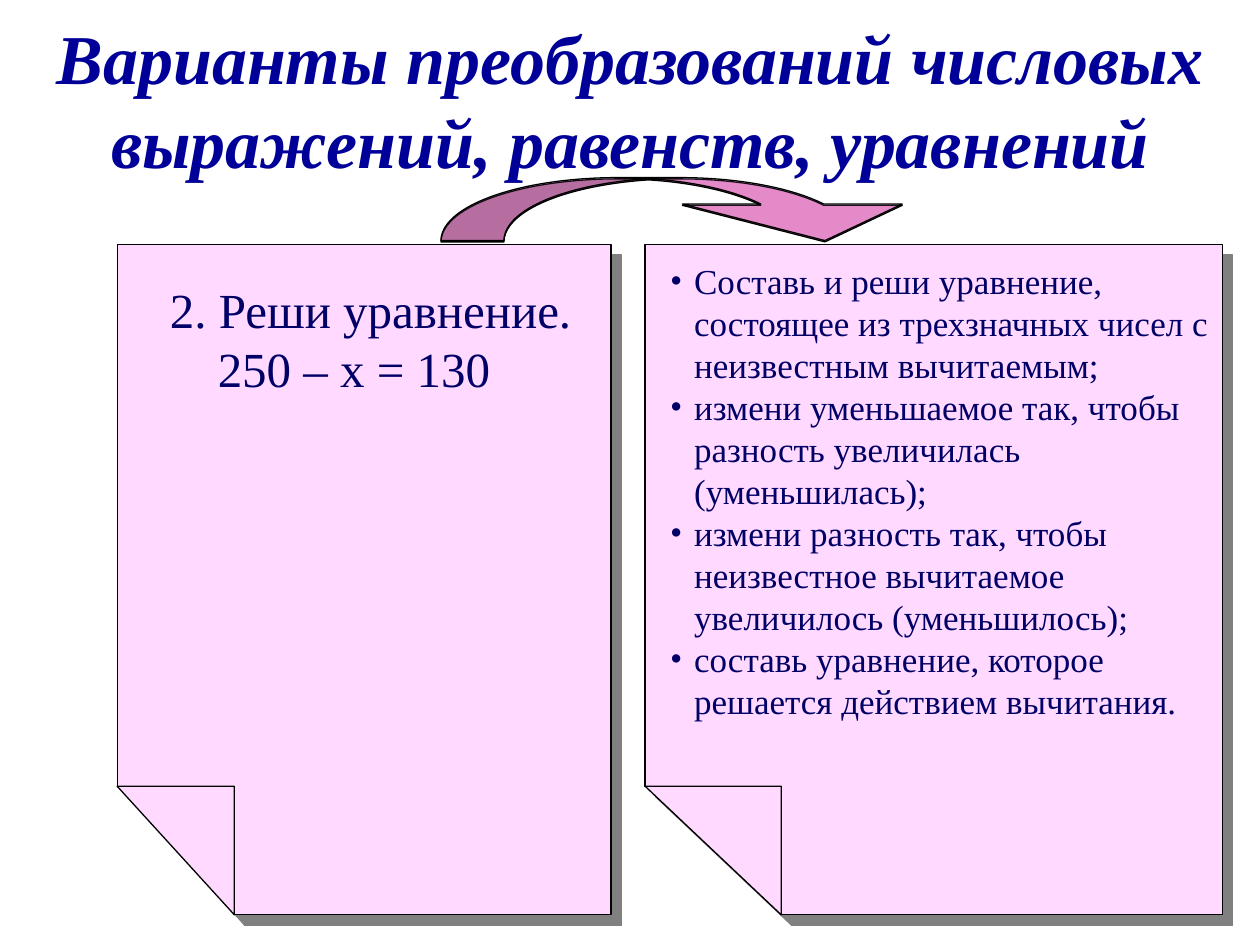
from dataclasses import dataclass
from typing import Optional

from lxml import etree
from pptx import Presentation
from pptx.dml.color import RGBColor
from pptx.enum.shapes import MSO_SHAPE
from pptx.enum.text import MSO_ANCHOR, MSO_AUTO_SIZE, PP_ALIGN
from pptx.oxml.ns import qn
from pptx.util import Inches, Pt

TITLE_ONLY = 5
CURVED_ARROW = MSO_SHAPE.CURVED_DOWN_ARROW
BOTTOM = MSO_ANCHOR.BOTTOM
NO_AUTOFIT = MSO_AUTO_SIZE.NONE
GROW = MSO_AUTO_SIZE.SHAPE_TO_FIT_TEXT
CENTER = PP_ALIGN.CENTER
LEFT = PP_ALIGN.LEFT


@dataclass(frozen=True)
class Theme:
    font: str = "Times New Roman"
    title: str = "000099"
    text: str = "000066"
    paper: str = "FFD9FF"
    arrow: str = "E187C3"
    glaze: str = "FFA5FF"
    line: str = "000000"
    shadow: str = "808080"
    title_size: float = 40
    task_size: float = 28
    list_size: float = 20
    line_width: float = 0.75
    shadow_distance: float = 8.5


@dataclass(frozen=True)
class Paper:
    left: float
    right: float
    fold_width: float
    top: float = 1.94
    fold_top: float = 6.24
    bottom: float = 7.26


@dataclass(frozen=True)
class Note:
    left: float
    top: float
    width: float
    height: float
    lines: tuple[str, ...]
    size: float
    indent: float
    bullet: Optional[str] = None


@dataclass(frozen=True)
class Arrow:
    top: float
    fill: str
    opacity: int = 100


THEME = Theme()
TITLE = "Варианты преобразований числовых выражений, равенств, уравнений"
PAPERS = (Paper(0.93, 4.85, 0.93), Paper(5.12, 9.7, 1.08))
ARROWS = (Arrow(1.42, THEME.arrow), Arrow(1.41, THEME.glaze, 10))
ARROW_ADJUSTMENTS = (1.93, 3.49, 0.58)
NOTES = (
    Note(1.25, 2.17, 3.42, 1.03, ("2. Реши уравнение. 250 – х = 130",), THEME.task_size, 0.38),
    Note(
        5.22, 2.01, 4.58, 3.8,
        (
            "Составь и реши уравнение, состоящее из трехзначных чисел с неизвестным вычитаемым;",
            "измени уменьшаемое так, чтобы разность увеличилась (уменьшилась);",
            "измени разность так, чтобы неизвестное вычитаемое увеличилось (уменьшилось);",
            "составь уравнение, которое решается действием вычитания.",
        ),
        THEME.list_size, 0.19, "•",
    ),
)


def rgb(color: str) -> RGBColor:
    return RGBColor.from_string(color)


def style_shape(sp, fill: str) -> None:
    sp.fill.solid()
    sp.fill.fore_color.rgb = rgb(fill)
    sp.line.color.rgb = rgb(THEME.line)
    sp.line.width = Pt(THEME.line_width)
    sp.shadow.inherit = False


def style_font(font, size: float, color: str) -> None:
    font.name = THEME.font
    font.size = Pt(size)
    font.color.rgb = rgb(color)


def add_drop_shadow(sp) -> None:
    effects = sp._element.spPr.find(qn("a:effectLst"))
    shadow = etree.SubElement(
        effects, qn("a:outerShdw"),
        dist=str(Pt(THEME.shadow_distance)), dir=str(45 * 60000),
        algn="ctr", rotWithShape="0",
    )
    etree.SubElement(shadow, qn("a:srgbClr"), val=THEME.shadow)


def add_title(slide) -> None:
    sp = slide.shapes.title
    sp.left, sp.top, sp.width, sp.height = 0, Inches(0.75), Inches(10), Inches(0.75)
    tf = sp.text_frame
    tf.text = TITLE
    tf.word_wrap = True
    tf.auto_size = NO_AUTOFIT
    tf.vertical_anchor = BOTTOM
    tf.margin_bottom = Inches(0.05)
    p = tf.paragraphs[0]
    p.alignment = CENTER
    r = p.runs[0]
    style_font(r.font, THEME.title_size, THEME.title)
    r.font.bold = r.font.italic = True


def add_paper(slide, paper: Paper) -> None:
    left, right = Inches(paper.left), Inches(paper.right)
    top, bottom = Inches(paper.top), Inches(paper.bottom)
    fold_top = Inches(paper.fold_top)
    fold_right = left + Inches(paper.fold_width)
    crease_corner = (fold_right, fold_top)
    crease_end = (fold_right, bottom)
    builder = slide.shapes.build_freeform(left, fold_top)
    builder.add_line_segments(
        [(left, top), (right, top), (right, bottom), crease_end, crease_corner]
    )
    builder.move_to(left, fold_top)
    builder.add_line_segments([crease_corner, crease_end])
    sp = builder.convert_to_shape()
    style_shape(sp, THEME.paper)
    add_drop_shadow(sp)


def add_arrow(slide, arrow: Arrow) -> None:
    sp = slide.shapes.add_shape(
        CURVED_ARROW, Inches(3.5), Inches(arrow.top), Inches(3.92), Inches(0.5)
    )
    for i, value in enumerate(ARROW_ADJUSTMENTS):
        sp.adjustments[i] = value
    style_shape(sp, arrow.fill)
    if arrow.opacity < 100:
        color = sp._element.spPr.find(qn("a:solidFill")).find(qn("a:srgbClr"))
        etree.SubElement(color, qn("a:alpha"), val=str(arrow.opacity * 1000))


def add_note(slide, note: Note) -> None:
    sp = slide.shapes.add_textbox(
        Inches(note.left), Inches(note.top), Inches(note.width), Inches(note.height)
    )
    tf = sp.text_frame
    tf.text = "\n".join(note.lines)
    tf.word_wrap = True
    tf.auto_size = GROW
    for p in tf.paragraphs:
        p.alignment = LEFT
        pPr = p._p.get_or_add_pPr()
        pPr.set("marL", str(Inches(note.indent)))
        pPr.set("indent", str(-Inches(note.indent)))
        if note.bullet:
            etree.SubElement(pPr, qn("a:buFont"), typeface=THEME.font)
            etree.SubElement(pPr, qn("a:buChar"), char=note.bullet)
        style_font(p.runs[0].font, note.size, THEME.text)


def main() -> None:
    prs = Presentation()
    prs.slide_width, prs.slide_height = Inches(10), Inches(7.5)
    slide = prs.slides.add_slide(prs.slide_layouts[TITLE_ONLY])
    add_title(slide)
    for paper in PAPERS:
        add_paper(slide, paper)
    for note in NOTES:
        add_note(slide, note)
    for arrow in ARROWS:
        add_arrow(slide, arrow)
    prs.save("out.pptx")


if __name__ == "__main__":
    main()
